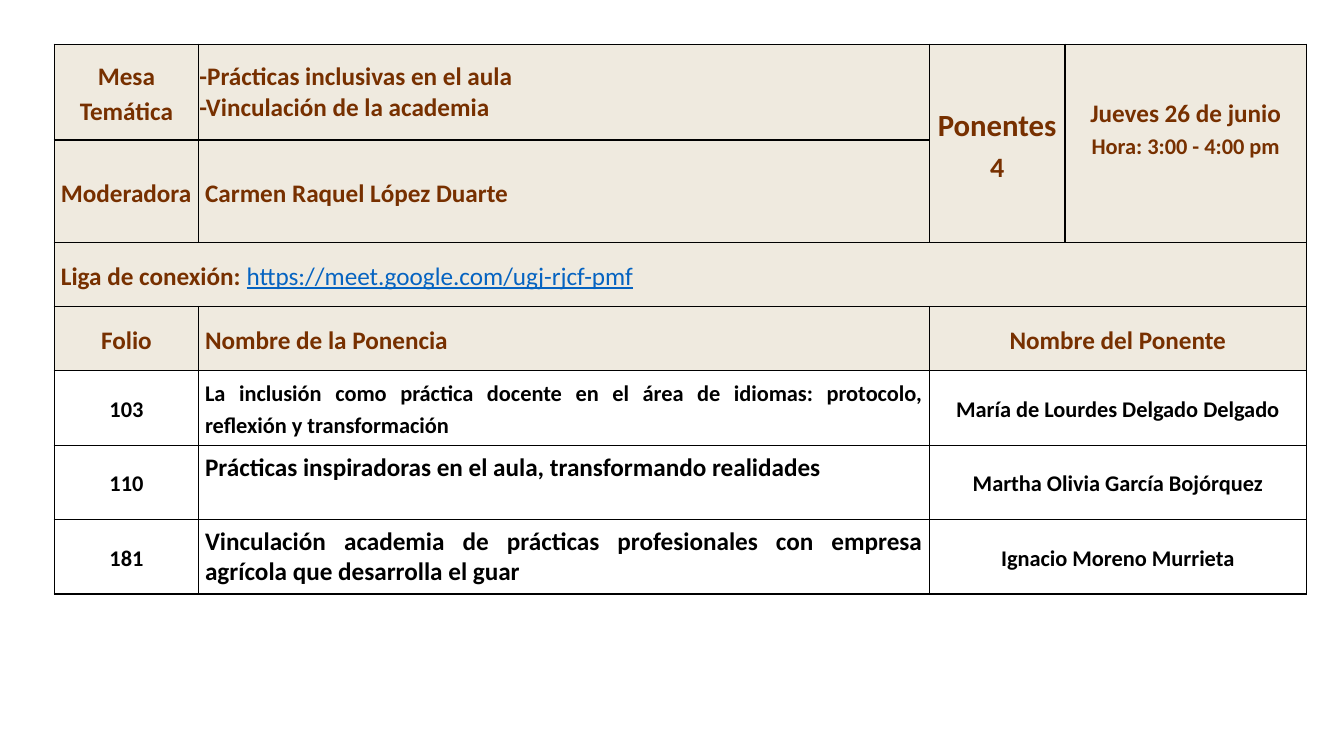
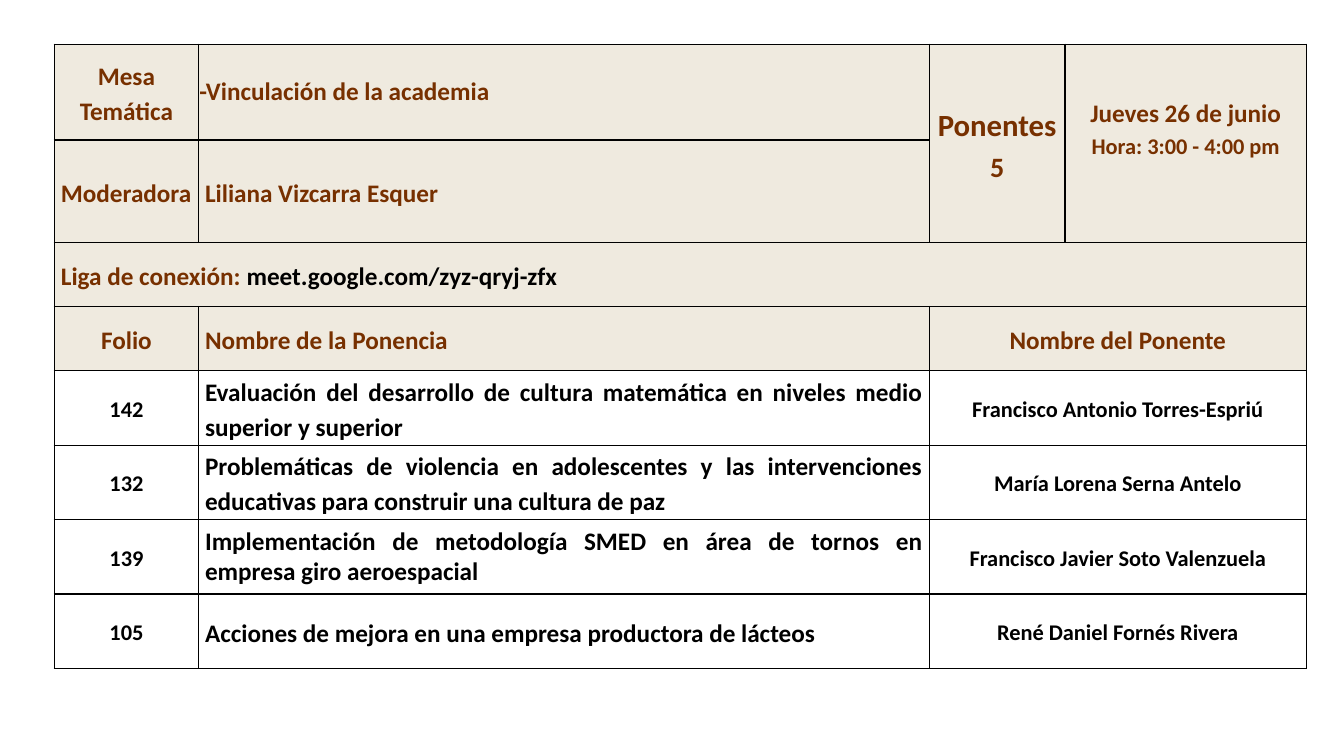
from dataclasses import dataclass

from lxml.etree import SubElement
from pptx import Presentation
from pptx.dml.color import RGBColor
from pptx.enum.text import MSO_ANCHOR, PP_ALIGN
from pptx.oxml.ns import qn
from pptx.slide import Slide
from pptx.table import Table, _Cell
from pptx.util import Pt

# Shared look
FONT = "Calibri"
BROWN, BLACK, LINK_BLUE, BEIGE = "773000", "000000", "0563C1", "EFEADF"
CENTER, JUSTIFY = PP_ALIGN.CENTER, PP_ALIGN.JUSTIFY
TABLE_LEFT, TABLE_TOP = 38.8, 31.6
COLUMN_WIDTHS = [103, 522, 97, 172.4]
HEADER_HEIGHTS = [68.4, 73.2, 45.8, 45.8]
PAPER_HEIGHT = 53.2
SIDE_MARGIN = 4.7
HEADER_SPACING, PAPER_SPACING = 1.15, 1.14


@dataclass
class Piece:
    text: str
    size: float = 18
    color: str = BROWN
    bold: bool = True
    underline: bool = False


@dataclass
class Paper:
    folio: str
    title: str
    speaker: str
    title_size: float = 18
    title_spacing: float = PAPER_SPACING
    title_bottom: float = 0


@dataclass
class Session:
    topics: list[str]
    moderator: str
    speaker_count: str
    link: Piece
    papers: list[Paper]


SESSIONS = [
    Session(
        ["-Prácticas inclusivas en el aula", "-Vinculación de la academia"],
        "Carmen Raquel López Duarte",
        "4",
        Piece("https://meet.google.com/ugj-rjcf-pmf", color=LINK_BLUE, bold=False, underline=True),
        [
            Paper("103", "La inclusión como práctica docente en el área de idiomas: protocolo, "
                  "reflexión y transformación", "María de Lourdes Delgado Delgado", title_size=16),
            Paper("110", "Prácticas inspiradoras en el aula, transformando realidades",
                  "Martha Olivia García Bojórquez", title_bottom=24),
            Paper("181", "Vinculación academia de prácticas profesionales con empresa agrícola "
                  "que desarrolla el guar", "Ignacio Moreno Murrieta", title_spacing=1),
        ],
    ),
    Session(
        ["-Vinculación de la academia"],
        "Liliana Vizcarra Esquer",
        "5",
        Piece("meet.google.com/zyz-qryj-zfx", color=BLACK),
        [
            Paper("142", "Evaluación del desarrollo de cultura matemática en niveles medio "
                  "superior y superior", "Francisco Antonio Torres-Espriú"),
            Paper("132", "Problemáticas de violencia en adolescentes y las intervenciones "
                  "educativas para construir una cultura de paz", "María Lorena Serna Antelo"),
            Paper("139", "Implementación de metodología SMED en área de tornos en empresa giro "
                  "aeroespacial", "Francisco Javier Soto Valenzuela", title_spacing=1),
            Paper("105", "Acciones de mejora en una empresa productora de lácteos",
                  "René Daniel Fornés Rivera"),
        ],
    ),
]


def rgb(color: str) -> RGBColor:
    return RGBColor.from_string(color)


def style_cell(cell: _Cell, fill: str | None) -> None:
    """Give a cell thin black borders and its fill."""
    properties = cell._tc.get_or_add_tcPr()
    for side in ("lnL", "lnR", "lnT", "lnB"):
        line = SubElement(properties, qn(f"a:{side}"), w=str(Pt(1)))
        SubElement(SubElement(line, qn("a:solidFill")), qn("a:srgbClr"), val=BLACK)
    if fill:
        cell.fill.solid()
        cell.fill.fore_color.rgb = rgb(fill)
    else:
        cell.fill.background()


def write_cell(cell: _Cell, lines: list[list[Piece]], alignment: PP_ALIGN = CENTER,
               spacing: float = HEADER_SPACING, side: float = SIDE_MARGIN,
               bottom: float = 0) -> None:
    """Write one paragraph per line, each made of formatted pieces."""
    cell.vertical_anchor = MSO_ANCHOR.MIDDLE
    cell.margin_left = cell.margin_right = Pt(side)
    cell.margin_top, cell.margin_bottom = Pt(0), Pt(bottom)
    frame = cell.text_frame
    for index, pieces in enumerate(lines):
        paragraph = frame.add_paragraph() if index else frame.paragraphs[0]
        paragraph.alignment = alignment
        paragraph.line_spacing = spacing
        for piece in pieces:
            run = paragraph.add_run()
            run.text = piece.text
            run.font.name = FONT
            run.font.size = Pt(piece.size)
            run.font.bold = piece.bold
            run.font.underline = piece.underline
            run.font.color.rgb = rgb(piece.color)


def add_grid(slide: Slide, paper_count: int) -> Table:
    """Add the empty table with its sizes, fills, borders and merged cells."""
    heights = HEADER_HEIGHTS + [PAPER_HEIGHT] * paper_count
    table = slide.shapes.add_table(
        len(heights), len(COLUMN_WIDTHS), Pt(TABLE_LEFT), Pt(TABLE_TOP),
        Pt(sum(COLUMN_WIDTHS)), Pt(sum(heights))).table
    table.first_row = table.horz_banding = False
    for column, width in zip(table.columns, COLUMN_WIDTHS):
        column.width = Pt(width)
    for index, (row, height) in enumerate(zip(table.rows, heights)):
        row.height = Pt(height)
        for cell in row.cells:
            style_cell(cell, BEIGE if index < len(HEADER_HEIGHTS) else None)
    for column_index in (2, 3):
        table.cell(0, column_index).merge(table.cell(1, column_index))
    table.cell(2, 0).merge(table.cell(2, 3))
    for row_index in range(3, len(heights)):
        table.cell(row_index, 2).merge(table.cell(row_index, 3))
    return table


def add_session(slide: Slide, session: Session) -> None:
    table = add_grid(slide, len(session.papers))

    # Session details
    write_cell(table.cell(0, 0), [[Piece("Mesa Temática")]])
    write_cell(table.cell(0, 1), [[Piece(topic)] for topic in session.topics],
               JUSTIFY, spacing=1, side=0.7)
    write_cell(table.cell(0, 2), [[Piece("Ponentes", 22)], [Piece(session.speaker_count, 20)]])
    write_cell(table.cell(0, 3), [[Piece("Jueves 26 de junio")],
                                  [Piece("Hora: 3:00 - 4:00 pm", 16)]], bottom=23)
    write_cell(table.cell(1, 0), [[Piece("Moderadora")]], JUSTIFY)
    write_cell(table.cell(1, 1), [[Piece(session.moderator)]], JUSTIFY)
    write_cell(table.cell(2, 0), [[Piece("Liga de conexión: "), session.link]], JUSTIFY)

    # Column headings
    write_cell(table.cell(3, 0), [[Piece("Folio")]])
    write_cell(table.cell(3, 1), [[Piece("Nombre de la Ponencia")]], JUSTIFY)
    write_cell(table.cell(3, 2), [[Piece("Nombre del Ponente")]])

    # Papers
    for row_index, paper in enumerate(session.papers, start=len(HEADER_HEIGHTS)):
        for column_index, text in ((0, paper.folio), (2, paper.speaker)):
            write_cell(table.cell(row_index, column_index), [[Piece(text, 16, BLACK)]],
                       spacing=PAPER_SPACING)
        write_cell(table.cell(row_index, 1), [[Piece(paper.title, paper.title_size, BLACK)]],
                   JUSTIFY, paper.title_spacing, bottom=paper.title_bottom)


def main() -> None:
    presentation = Presentation()
    presentation.slide_width, presentation.slide_height = Pt(960), Pt(540)
    for session in SESSIONS:
        add_session(presentation.slides.add_slide(presentation.slide_layouts[6]), session)
    presentation.save("out.pptx")


if __name__ == "__main__":
    main()
